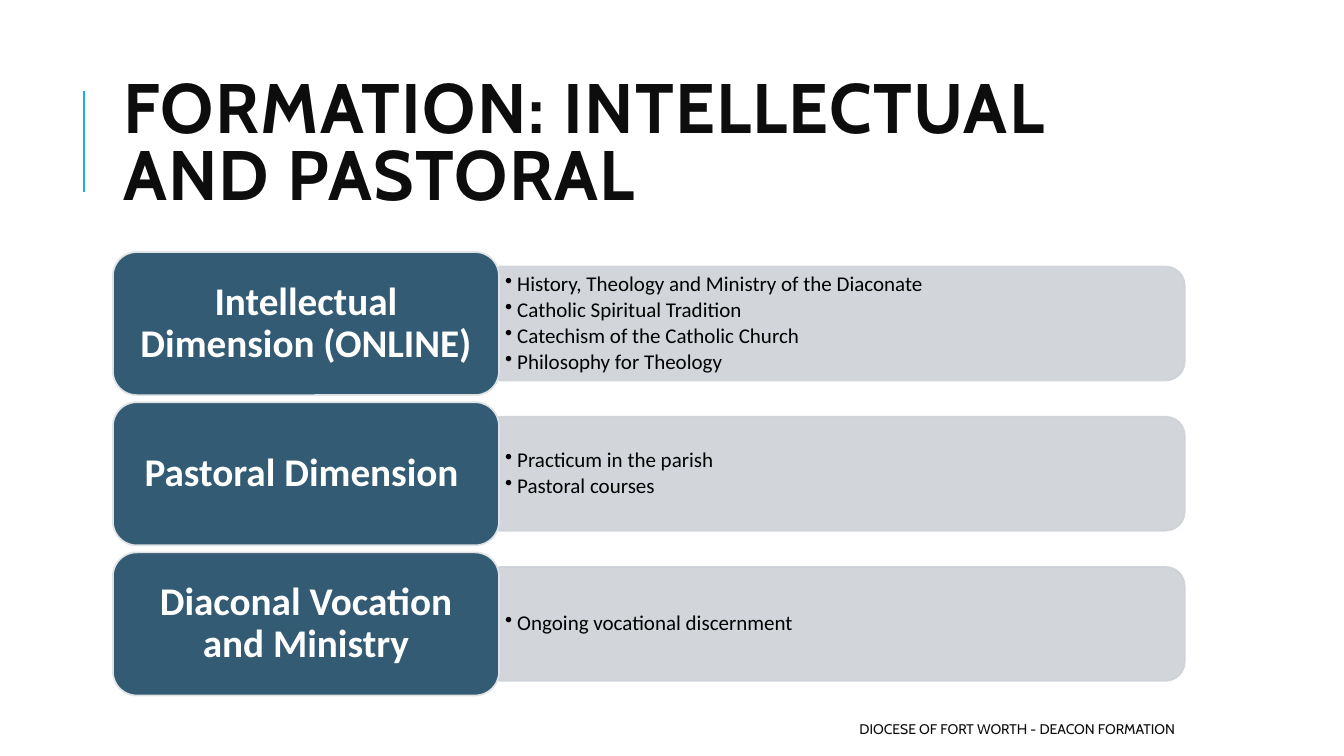
import pptx
import pptx.util
import pptx.dml.color
import pptx.enum.shapes
import pptx.enum.text
import pptx.oxml
import pptx.oxml.ns

# Content
TITLE = "FORMATION: INTELLECTUAL AND PASTORAL"
FOOTER = "DIOCESE OF FORT WORTH - DEACON FORMATION"
ROWS = [
    ("Intellectual Dimension (ONLINE)", [
        "History, Theology and Ministry of the Diaconate",
        "Catholic Spiritual Tradition",
        "Catechism of the Catholic Church",
        "Philosophy for Theology"]),
    ("Pastoral Dimension ", ["Practicum in the parish", "Pastoral courses"]),
    ("Diaconal Vocation and Ministry", ["Ongoing vocational discernment"]),
]

# Look
HEX = {"accent": "1CADE4", "ink": "0D0D0D", "bar": "CED2D6", "card": "335B74",
       "edge": "DFE3E5", "white": "FFFFFF", "black": "000000"}
FONTS = {
    "title": {"name": "Cabin", "size": 50, "bold": True, "color": "ink"},
    "foot": {"name": "Cabin", "size": 10, "bold": False, "color": "ink"},
    "card": {"name": "Calibri", "size": 28, "bold": True, "color": "white"},
    "item": {"name": "Calibri", "size": 15, "bold": False, "color": "black"},
}

# Grid, in inches
WIDE, HIGH = 13.33, 7.5
LEFT, TOP, PITCH = 1.12, 2.5, 1.49
CARD_W, CARD_H = 3.83, 1.42
BAR_W, BAR_H = 6.8, 1.13
TEXT_W, TEXT_H = 6.75, 1.02

inch = pptx.util.Inches
Pt = pptx.util.Pt
Align = pptx.enum.text.PP_ALIGN
Shape = pptx.enum.shapes.MSO_SHAPE


def tint(key):
    return pptx.dml.color.RGBColor.from_string(HEX[key])


def box(*size):
    return [inch(n) for n in size]


def write(frame, lines, look, pad, form):
    """Fill a text frame; form holds the paragraph format values."""
    sides = ("left", "top", "right", "bottom")
    for side, gap in zip(sides, pad * 2):
        setattr(frame, "margin_" + side, inch(gap))
    frame.word_wrap = True
    frame.auto_size = pptx.enum.text.MSO_AUTO_SIZE.NONE
    frame.vertical_anchor = pptx.enum.text.MSO_ANCHOR.MIDDLE
    style = dict(FONTS[look], size=Pt(FONTS[look]["size"]))
    color = style.pop("color")
    for i, line in enumerate(lines):
        para = frame.add_paragraph() if i else frame.paragraphs[0]
        for key, value in form.items():
            setattr(para, key, value)
        run = para.add_run()
        run.text = line
        for key, value in style.items():
            setattr(run.font, key, value)
        run.font.color.rgb = tint(color)


def paint(shape, fill, edge):
    shape.shadow.inherit = False
    shape.fill.solid()
    shape.fill.fore_color.rgb = tint(fill)
    shape.line.color.rgb = tint(edge)
    shape.line.width = Pt(1.25)


def fade(shape, share):
    for node in shape.element.spPr.iter(pptx.oxml.ns.qn("a:srgbClr")):
        alpha = pptx.oxml.parse_xml(
            f'<a:alpha {pptx.oxml.ns.nsdecls("a")} val="{share * 1000}"/>')
        node.append(alpha)


def bullet(para):
    props = para._p.get_or_add_pPr()
    props.set("marL", str(inch(0.12)))
    props.set("indent", str(inch(-0.12)))
    props.append(pptx.oxml.parse_xml(
        f'<a:buChar {pptx.oxml.ns.nsdecls("a")} char="•"/>'))


def add_row(shapes, top, label, items):
    mid = top + CARD_H / 2
    edge = LEFT + CARD_W

    # Bar: a quarter turn puts the round corners on the right
    bar = shapes.add_shape(Shape.ROUND_2_SAME_RECTANGLE, *box(
        edge + (BAR_W - BAR_H) / 2, mid - BAR_W / 2, BAR_H, BAR_W))
    bar.rotation = 90
    paint(bar, "bar", "bar")
    fade(bar, 90)

    # Bulleted items
    note = shapes.add_textbox(*box(edge, mid - TEXT_H / 2, TEXT_W, TEXT_H))
    write(note.text_frame, items, "item", (0.06, 0.03),
          {"alignment": Align.LEFT, "line_spacing": 0.9, "space_after": Pt(2.25)})
    for para in note.text_frame.paragraphs:
        bullet(para)

    # Label card
    card = shapes.add_shape(Shape.ROUNDED_RECTANGLE,
                            *box(LEFT, top, CARD_W, CARD_H))
    paint(card, "card", "edge")
    write(card.text_frame, [label], "card", (0.19, 0.13),
          {"alignment": Align.CENTER, "line_spacing": 0.9})


def main():
    deck = pptx.Presentation()
    deck.slide_width, deck.slide_height = box(WIDE, HIGH)
    slide = deck.slides.add_slide(deck.slide_layouts[5])
    shapes = slide.shapes

    # Title and its accent rule
    title = shapes.title
    spot = dict(zip(("left", "top", "width", "height"),
                    box(LEFT, 0.64, 10.63, 1.64)))
    for key, value in spot.items():
        setattr(title, key, value)
    write(title.text_frame, [TITLE], "title", (0.1, 0.05),
          {"alignment": Align.LEFT, "line_spacing": 0.8})
    title.text_frame.paragraphs[0].runs[0].font._element.set("spc", "100")

    rule = shapes.add_connector(pptx.enum.shapes.MSO_CONNECTOR.STRAIGHT,
                                *box(0.83, 1.9, 0.83, 0.9))
    rule.line.color.rgb = tint("accent")
    rule.line.width = Pt(1.5)
    rule.element.spPr.append(pptx.oxml.parse_xml(
        f'<a:effectLst {pptx.oxml.ns.nsdecls("a")}/>'))

    # Rows
    for i, (label, items) in enumerate(ROWS):
        add_row(shapes, TOP + i * PITCH, label, items)

    # Footer
    foot = shapes.add_textbox(*box(5.3, 7.08, 6.45, 0.3))
    write(foot.text_frame, [FOOTER], "foot", (0.1, 0.05),
          {"alignment": Align.RIGHT})

    deck.save("out.pptx")


if __name__ == "__main__":
    main()
